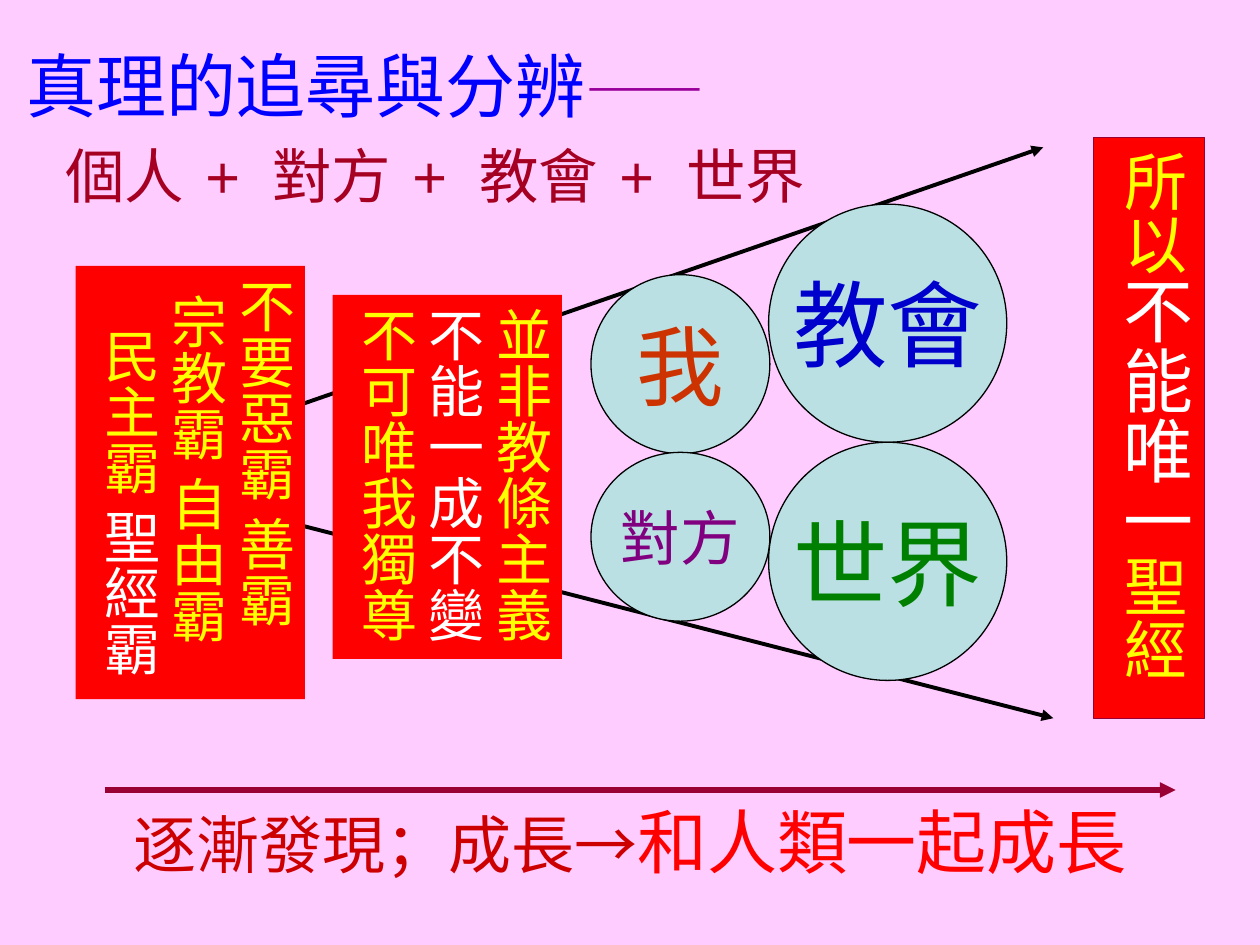
from dataclasses import dataclass

from lxml import etree
from pptx import Presentation
from pptx.dml.color import RGBColor
from pptx.enum.shapes import MSO_CONNECTOR, MSO_SHAPE
from pptx.enum.text import MSO_ANCHOR, PP_ALIGN
from pptx.oxml.ns import qn
from pptx.util import Inches, Pt


@dataclass(frozen=True)
class Theme:
    font: str = "Arial"
    cjk_font: str = "Noto Sans CJK SC"
    background: str = "FFCCFF"
    circle: str = "BBE0E3"
    panel: str = "FF0000"
    black: str = "000000"
    maroon: str = "990033"
    yellow: str = "FFFF00"
    white: str = "FFFFFF"
    title_blue: str = "0000FF"
    dash_purple: str = "990099"
    subtitle_red: str = "A50021"
    growth_red: str = "CC0000"
    title: int = 40
    body: int = 36
    subtitle: int = 34
    column: int = 32


THEME = Theme()


def rgb(value):
    return RGBColor.from_string(value)


def box_inches(box):
    return [Inches(value) for value in box]


def add_runs(paragraph, runs, font=THEME.font):
    """Write (text, size, colour) runs into the paragraph."""
    paragraph.font.name = font
    for text, size, color in runs:
        run = paragraph.add_run()
        run.text = text
        run.font.name = font
        run.font.size = Pt(size)
        run.font.color.rgb = rgb(color)


def set_indent(paragraph, inches):
    paragraph._p.get_or_add_pPr().set("marL", str(Inches(inches)))


def add_filled_shape(slide, kind, box, fill, line=None):
    shape = slide.shapes.add_shape(kind, *box_inches(box))
    shape.shadow.inherit = False
    shape.fill.solid()
    shape.fill.fore_color.rgb = rgb(fill)
    if line:
        shape.line.color.rgb = rgb(line)
        shape.line.width = Pt(0.75)
    else:
        shape.line.fill.background()
    return shape


def add_arrow(slide, start, end, color, width):
    connector = slide.shapes.add_connector(
        MSO_CONNECTOR.STRAIGHT, *box_inches(start + end))
    connector.line.color.rgb = rgb(color)
    connector.line.width = Pt(width)
    etree.SubElement(connector.line._get_or_add_ln(), qn("a:tailEnd"), type="triangle")
    etree.SubElement(connector._element.spPr, qn("a:effectLst"))


def add_heading(slide, box):
    frame = slide.shapes.add_textbox(*box_inches(box)).text_frame
    frame.word_wrap = True
    frame.margin_top = Inches(0.34)

    title = frame.paragraphs[0]
    set_indent(title, 0.11)
    add_runs(title, [("真理的追尋與分辨", THEME.title, THEME.title_blue),
                     ("——", THEME.subtitle, THEME.dash_purple)])
    title.runs[-1].font.bold = True

    subtitle = frame.add_paragraph()
    subtitle.space_before = Pt(7)
    set_indent(subtitle, 0.42)
    for index, word in enumerate(["個人", "對方", "教會", "世界"]):
        if index:
            add_runs(subtitle, [(" + ", THEME.subtitle, THEME.subtitle_red)])
            # Letter spacing widens the gaps around the plus sign
            subtitle.runs[-1].font._element.set("spc", "450")
        add_runs(subtitle, [(word, THEME.subtitle, THEME.subtitle_red)])


def add_circle(slide, box, text, size, color):
    circle = add_filled_shape(slide, MSO_SHAPE.OVAL, box, THEME.circle, THEME.black)
    frame = circle.text_frame
    frame.word_wrap = False
    frame.vertical_anchor = MSO_ANCHOR.MIDDLE
    frame.paragraphs[0].alignment = PP_ALIGN.CENTER
    add_runs(frame.paragraphs[0], [(text, size, color)])


def add_circles(slide, left, middle):
    """Two columns of touching circles; the columns meet at middle."""
    small, large = 1.42, 1.89
    add_circle(slide, (left, 2.18, small, small), "我", 50, "CC3300")
    add_circle(slide, (left, 3.59, small, 1.34), "對方", 34, "800080")
    add_circle(slide, (middle, 1.62, large, large), "教會", 54, "0000CC")
    add_circle(slide, (middle, 1.62 + large, large, large), "世界", 54, "008000")


def add_vertical_panel(slide, box, columns, line=None, indents=None):
    """Red panel whose columns run from right to left."""
    panel = add_filled_shape(slide, MSO_SHAPE.RECTANGLE, box, THEME.panel, line)
    frame = panel.text_frame
    frame.word_wrap = True
    frame.vertical_anchor = MSO_ANCHOR.TOP
    frame._txBody.bodyPr.set("vert", "eaVert")
    for index, runs in enumerate(columns):
        paragraph = frame.paragraphs[0] if index == 0 else frame.add_paragraph()
        paragraph.alignment = PP_ALIGN.LEFT if indents else PP_ALIGN.CENTER
        if indents:
            set_indent(paragraph, indents[index])
        add_runs(paragraph, runs)


def add_growth_caption(slide, box):
    frame = slide.shapes.add_textbox(*box_inches(box)).text_frame
    frame.word_wrap = True
    paragraph = frame.paragraphs[0]
    paragraph.alignment = PP_ALIGN.CENTER
    add_runs(paragraph, [("逐漸發現；成長→", THEME.body, THEME.growth_red),
                         ("和人類一起成長", THEME.title, THEME.panel)],
             THEME.cjk_font)


def main():
    presentation = Presentation()
    presentation.slide_width, presentation.slide_height = Inches(10), Inches(7.5)
    slide = presentation.slides.add_slide(presentation.slide_layouts[6])
    slide.background.fill.solid()
    slide.background.fill.fore_color.rgb = rgb(THEME.background)

    add_heading(slide, (0, 0, 10, 1.8))

    # Widening view: two diverging arrows behind the circles
    add_arrow(slide, (0.83, 3.75), (8.28, 1.17), THEME.black, 2.25)
    add_arrow(slide, (0.75, 3.75), (8.36, 5.7), THEME.black, 2.25)
    add_circles(slide, 4.69, 6.1)

    # Growth over time
    add_arrow(slide, (0.83, 6.27), (9.33, 6.27), THEME.maroon, 3)
    add_growth_caption(slide, (0, 6.29, 10, 0.77))

    # Vertical panels
    size, yellow, white = THEME.column, THEME.yellow, THEME.white
    add_vertical_panel(slide, (8.68, 1.09, 0.88, 4.61), [
        [("所以", THEME.body, yellow), ("不能唯一", THEME.title, white),
         ("聖經", THEME.body, yellow)]], line=THEME.maroon)
    add_vertical_panel(slide, (2.64, 2.34, 1.82, 2.89), [
        [("並非教條主義", size, yellow)],
        [("不能一成不變", size, white)],
        [("不可唯我獨尊", size, yellow)]])
    add_vertical_panel(slide, (0.6, 2.11, 1.82, 3.44), [
        [("不要惡霸 善霸", size, yellow)],
        [("宗教霸 自由霸", size, yellow)],
        [("民主霸 ", size, yellow), ("聖經霸", size, white)]],
        indents=[0, 0.13, 0.4])

    presentation.save("out.pptx")


if __name__ == "__main__":
    main()
